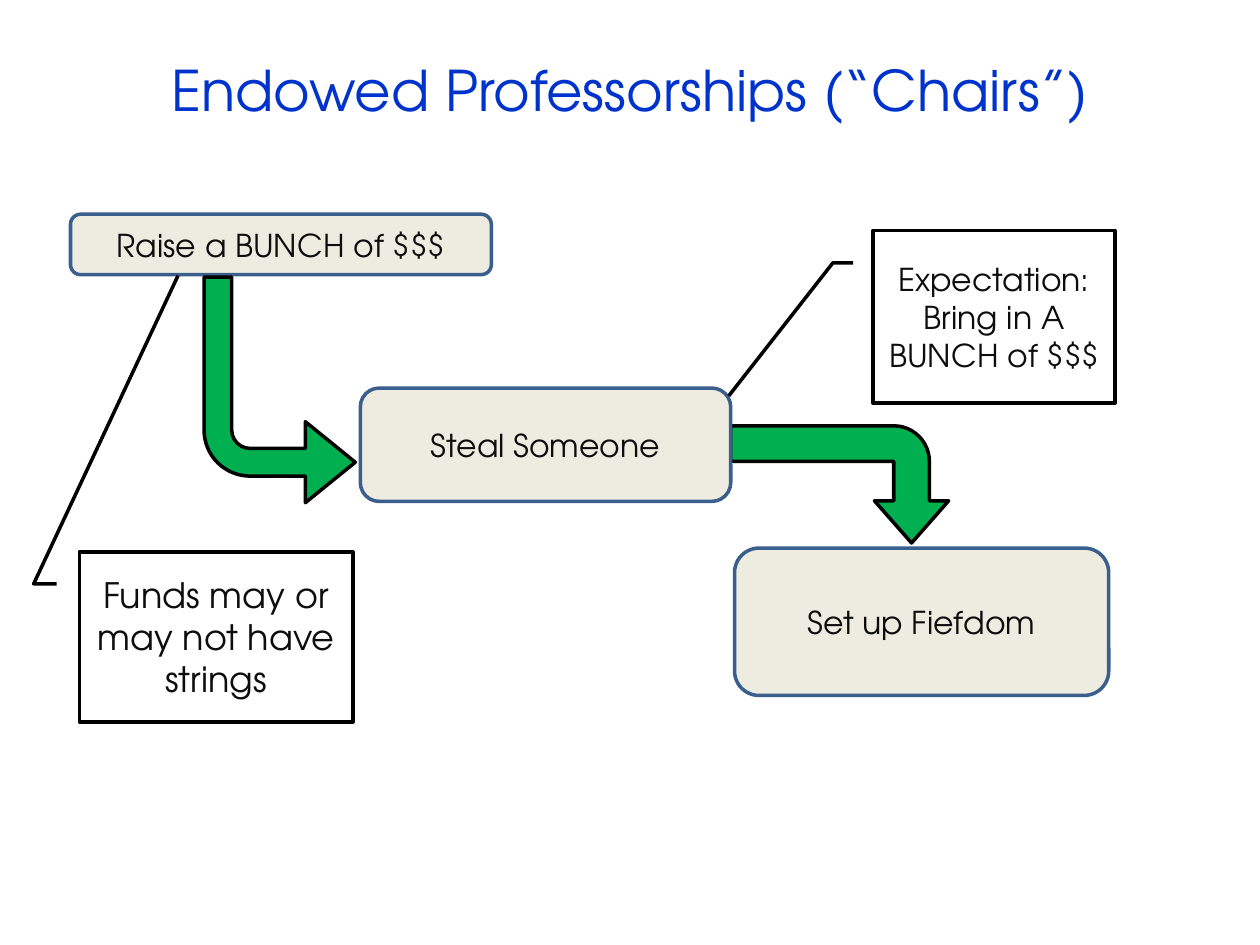
from pptx import Presentation
from pptx.dml.color import RGBColor
from pptx.enum import shapes, text
from pptx.util import Inches, Pt

FONT = "TeX Gyre Adventor"
COLORS = {
    "title": "0033CC",
    "text": "0D0D0D",
    "step": "EEECE1",
    "step_line": "3A5F8C",
    "arrow": "00B050",
    "line": "000000",
}
SHAPE = shapes.MSO_SHAPE


def rgb(name):
    return RGBColor.from_string(COLORS[name])


def write(sp, content, size=18, color="text"):
    tf = sp.text_frame
    tf.word_wrap = True
    tf.vertical_anchor = text.MSO_ANCHOR.MIDDLE
    p = tf.paragraphs[0]
    p.alignment = text.PP_ALIGN.CENTER
    r = p.add_run()
    r.text = content
    r.font.name = FONT
    r.font.size = Pt(size)
    r.font.color.rgb = rgb(color)


def add_title(s, content):
    sp = s.shapes.add_textbox(*map(Inches, (0.5, 0.3, 9, 0.82)))
    write(sp, content, size=32, color="title")


def add_outlined(s, kind, box, fill=None, line="line", adjustments=()):
    """Add a preset shape with a 2 pt outline; no fill name leaves it hollow."""
    sp = s.shapes.add_shape(kind, *map(Inches, box))
    sp.shadow.inherit = False
    if fill:
        sp.fill.solid()
        sp.fill.fore_color.rgb = rgb(fill)
    else:
        sp.fill.background()
    sp.line.color.rgb = rgb(line)
    sp.line.width = Pt(2)
    for i, value in enumerate(adjustments):
        sp.adjustments[i] = value
    return sp


def add_step(s, content, box):
    sp = add_outlined(s, SHAPE.ROUNDED_RECTANGLE, box, "step", "step_line")
    write(sp, content)


def add_bent_arrow(s, box, adjustments, flips, rotation=0):
    sp = add_outlined(s, SHAPE.BENT_ARROW, box, "arrow", adjustments=adjustments)
    sp.rotation = rotation
    for flip in flips:
        sp.element.spPr.xfrm.set(flip, "1")


def add_callout(s, content, box, target, size=18):
    """Add a boxed note whose leader ends at target, (y, x) as shares of the box."""
    leader = (0.188, -0.083, 0.188, -0.167, *target)
    sp = add_outlined(s, SHAPE.LINE_CALLOUT_2, box, adjustments=leader)
    write(sp, content, size=size)


def main():
    prs = Presentation()
    prs.slide_width, prs.slide_height = Inches(10), Inches(7.5)
    s = prs.slides.add_slide(prs.slide_layouts[6])

    add_title(s, "Endowed Professorships (“Chairs”)")
    add_step(s, "Raise a BUNCH of $$$", (0.56, 1.7, 3.34, 0.48))
    add_bent_arrow(s, (1.62, 2.2, 1.2, 1.79), (0.183, 0.268, 0.33, 0.304),
                   flips=["flipV"])
    add_bent_arrow(s, (6.2, 2.98, 0.93, 1.73), (0.304, 0.317, 0.36, 0.304),
                   flips=["flipH", "flipV"], rotation=270)
    add_step(s, "Set up Fiefdom", (5.83, 4.35, 2.97, 1.17))
    add_step(s, "Steal Someone", (2.86, 3.08, 2.94, 0.9))
    add_callout(s, "Funds may or may not have strings",
                (0.63, 4.38, 2.17, 1.35), target=(-1.624, 0.361), size=20)
    add_callout(s, "Expectation: Bring in A BUNCH of $$$",
                (6.93, 1.83, 1.92, 1.37), target=(0.958, -0.597))

    prs.save("out.pptx")


if __name__ == "__main__":
    main()
